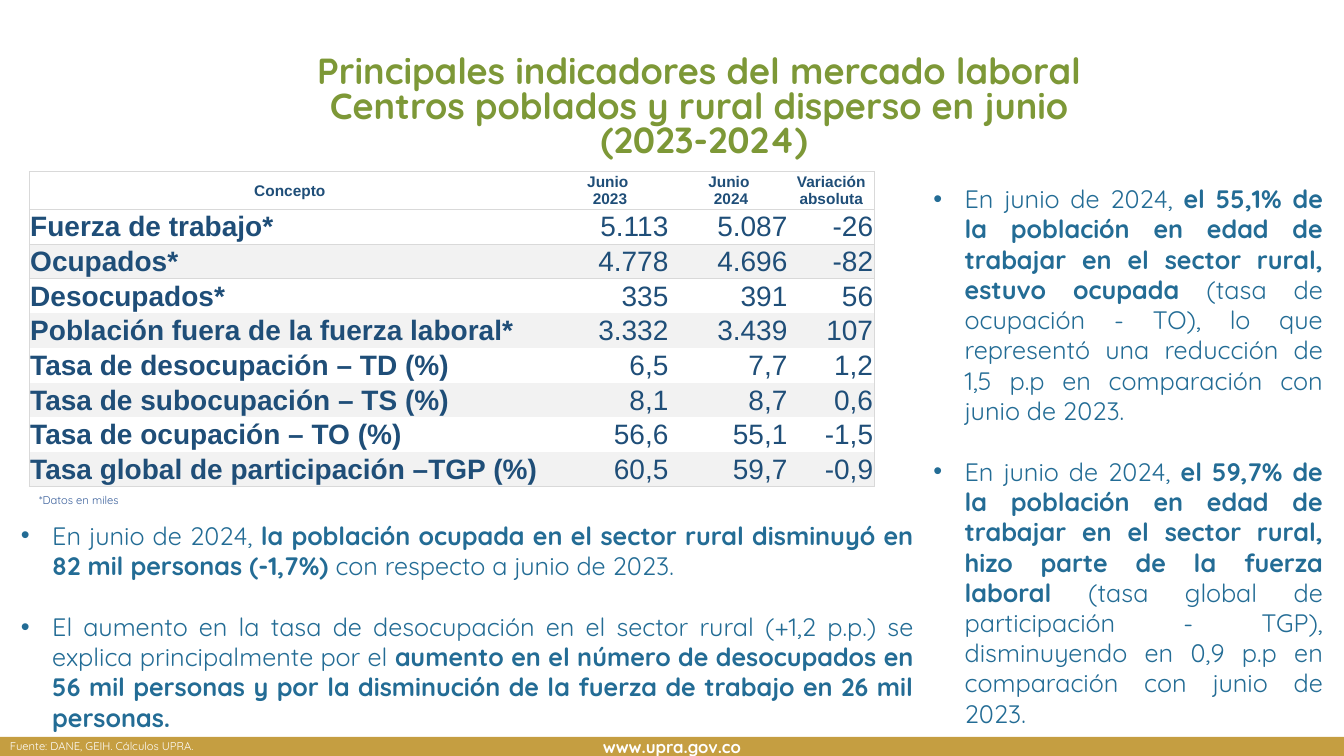
import pptx
import pptx.util
import pptx.dml.color
import pptx.enum.shapes
import pptx.enum.text
import pptx.oxml
import pptx.oxml.ns
import lxml.etree

Inches = pptx.util.Inches
Pt = pptx.util.Pt
ALIGN = pptx.enum.text.PP_ALIGN
ANCHOR = pptx.enum.text.MSO_ANCHOR
FIT = pptx.enum.text.MSO_AUTO_SIZE
QN = pptx.oxml.ns.qn

HUES = {
    "gold": "C59E41",
    "white": "FFFFFF",
    "green": "7D9837",
    "blue": "236C95",
    "navy": "1F4E78",
    "note": "395F9B",
    "band": "F2F2F2",
    "line": "D9D9D9",
}

HEADS = [["Concepto"], ["Junio ", "2023"], ["Junio", " 2024"], ["Variación absoluta"]]
ROWS = [
    ("Fuerza de trabajo*", "5.113", "5.087", "-26"),
    ("Ocupados*", "4.778", "4.696", "-82"),
    ("Desocupados*", "335", "391", "56"),
    ("Población fuera de la fuerza laboral*", "3.332", "3.439", "107"),
    ("Tasa de desocupación – TD (%)", "6,5", "7,7", "1,2"),
    ("Tasa de subocupación – TS (%)", "8,1", "8,7", "0,6"),
    ("Tasa de ocupación – TO (%)", "56,6", "55,1", "-1,5"),
    ("Tasa global de participación –TGP (%)", "60,5", "59,7", "-0,9"),
]
WIDTHS = [5.17, 1.18, 1.18, 0.85]

JOBS = [
    [
        ("En junio de 2024, ", False),
        ("la población ocupada en el sector rural disminuyó en 82 mil personas (-1,7%) ", True),
        ("con respecto a junio de 2023.", False),
    ],
    [
        ("El aumento en la tasa de desocupación en el sector rural (+1,2 p.p.) se explica "
         "principalmente por el ", False),
        ("aumento en el número de desocupados en 56 mil personas y por la disminución "
         "de la fuerza de trabajo en 26 mil personas.", True),
    ],
]
RATES = [
    [
        ("En junio de 2024, ", False),
        ("el 55,1% de la población en edad de trabajar en el sector rural, estuvo ocupada ", True),
        ("(tasa de ocupación - TO), lo que representó una reducción de 1,5 p.p en "
         "comparación con junio de 2023.", False),
    ],
    [
        ("En junio de 2024, ", False),
        ("el 59,7% de la población en edad de trabajar en el sector rural, hizo parte "
         "de la fuerza laboral ", True),
        ("(tasa global de participación - TGP), disminuyendo en 0,9 p.p en comparación "
         "con junio de 2023.", False),
    ],
]


def paint(fill, hue):
    fill.solid()
    fill.fore_color.rgb = pptx.dml.color.RGBColor.from_string(HUES[hue])


def add_run(para, text, size, hue, bold=False, face="Quicksand"):
    run = para.add_run()
    run.text = text
    run.font.size = Pt(size)
    run.font.name = face
    run.font.bold = bold
    run.font.color.rgb = pptx.dml.color.RGBColor.from_string(HUES[hue])


def add_paras(frame, count):
    return [frame.paragraphs[0]] + [frame.add_paragraph() for _ in range(count - 1)]


def add_box(slide, left, top, width, height, fit=FIT.SHAPE_TO_FIT_TEXT):
    box = slide.shapes.add_textbox(Inches(left), Inches(top), Inches(width), Inches(height))
    frame = box.text_frame
    frame.word_wrap = True
    frame.auto_size = fit
    return frame


def add_bar(slide):
    bar = slide.shapes.add_shape(
        pptx.enum.shapes.MSO_SHAPE.RECTANGLE,
        Inches(0), Inches(7.31), Inches(13.33), Inches(0.19))
    bar.shadow.inherit = False
    paint(bar.fill, "gold")
    bar.line.fill.background()
    frame = bar.text_frame
    frame.vertical_anchor = ANCHOR.MIDDLE
    para = frame.paragraphs[0]
    para.alignment = ALIGN.CENTER
    add_run(para, "www.upra.gov.co", 12, "white", True)


def add_title(slide, lines):
    frame = add_box(slide, 2.03, 0.51, 9.91, 1.19, FIT.NONE)
    for para, line in zip(add_paras(frame, len(lines)), lines):
        para.alignment = ALIGN.CENTER
        para.line_spacing = 0.8
        add_run(para, line, 25.9, "green", True)


def add_list(slide, place, items):
    frame = add_box(slide, *place)
    for num, (para, runs) in enumerate(zip(add_paras(frame, len(items)), items)):
        props = para._p.get_or_add_pPr()
        props.set("marL", str(Inches(0.31)))
        props.set("indent", str(-Inches(0.31)))
        lxml.etree.SubElement(props, QN("a:buFont")).set("typeface", "Arial")
        lxml.etree.SubElement(props, QN("a:buChar")).set("char", "•")
        para.alignment = ALIGN.JUSTIFY
        if num:
            para.space_before = Pt(22)
        for text, bold in runs:
            add_run(para, text, 18, "blue", bold)


def add_note(slide, place, text, hue):
    para = add_box(slide, *place).paragraphs[0]
    add_run(para, text, 8, hue)


def add_edges(cell, sides):
    props = cell._tc.get_or_add_tcPr()
    for spot, side in enumerate(sides):
        edge = pptx.oxml.parse_xml(
            f'<a:ln{side} {pptx.oxml.ns.nsdecls("a")} w="{Pt(0.5)}"><a:solidFill>'
            f'<a:srgbClr val="{HUES["line"]}"/></a:solidFill></a:ln{side}>')
        props.insert(spot, edge)


def fill_cell(cell, lines, align, size, bold, hue):
    cell.margin_left = cell.margin_right = cell.margin_top = Inches(0.01)
    cell.margin_bottom = 0
    cell.vertical_anchor = ANCHOR.MIDDLE
    paint(cell.fill, hue)
    for para, line in zip(add_paras(cell.text_frame, len(lines)), lines):
        para.alignment = align
        add_run(para, line, size, "navy", bold, "Arial")


def add_grid(slide):
    last = len(ROWS)
    shape = slide.shapes.add_table(
        last + 1, len(WIDTHS), Inches(0.29), Inches(1.7), Inches(8.38), Inches(3.13))
    grid = shape.table
    grid.first_row = grid.horz_banding = False
    style = grid._tbl.tblPr.find(QN("a:tableStyleId"))
    style.text = "{2D5ABB26-0587-4C30-8999-92F81FD0307C}"
    for col, width in zip(grid.columns, WIDTHS):
        col.width = Inches(width)
    for row, line in enumerate(grid.rows):
        line.height = Inches(0.34 if row else 0.37)
        for col in range(len(WIDTHS)):
            cell = grid.cell(row, col)
            if row == 0:
                fill_cell(cell, HEADS[col], ALIGN.CENTER, 11, True, "white")
            else:
                align = ALIGN.RIGHT if col else ALIGN.LEFT
                hue = "white" if row % 2 else "band"
                fill_cell(cell, [ROWS[row - 1][col]], align, 20, col == 0, hue)
            tests = {"L": col == 0, "R": col == len(WIDTHS) - 1,
                     "T": row < 3, "B": row in (0, 1, last)}
            add_edges(cell, [side for side, shown in tests.items() if shown])


def main():
    deck = pptx.Presentation()
    deck.slide_width = Inches(13.33)
    deck.slide_height = Inches(7.5)
    slide = deck.slides.add_slide(deck.slide_layouts[6])
    add_bar(slide)
    add_title(slide, ["Principales indicadores del mercado laboral ",
                      "Centros poblados y rural disperso en junio ",
                      "(2023-2024)"])
    add_list(slide, (0.11, 5.11, 9.05, 2.22), JOBS)
    add_grid(slide)
    add_list(slide, (9.16, 1.77, 4.06, 5.25), RATES)
    add_note(slide, (0.29, 4.84, 1.16, 0.24), "*Datos en miles", "note")
    add_note(slide, (0, 7.29, 4.55, 0.24), "Fuente: DANE, GEIH. Cálculos UPRA. ", "white")
    deck.save("out.pptx")


if __name__ == "__main__":
    main()
